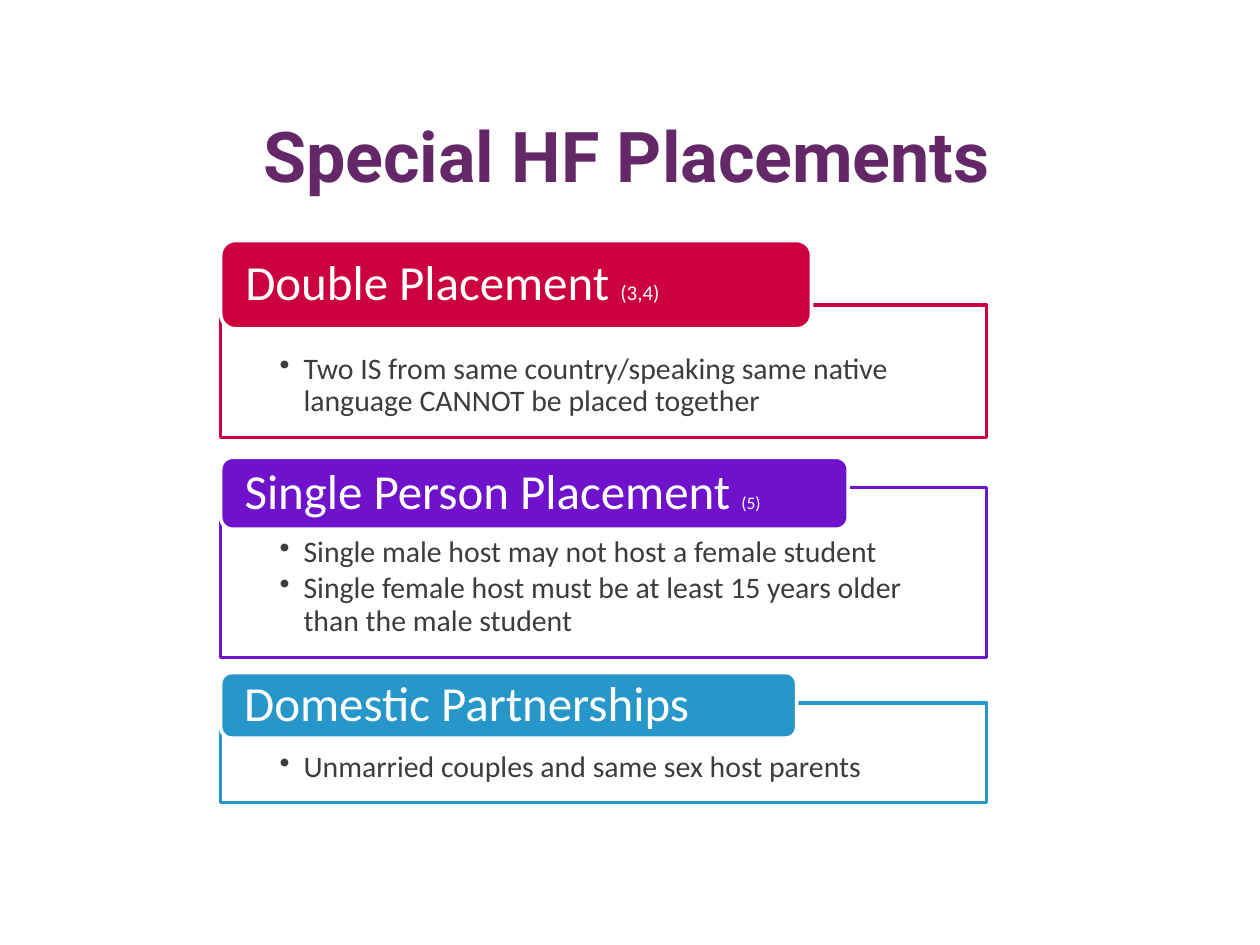
from lxml.etree import SubElement
from pptx import Presentation
from pptx.dml.color import RGBColor
from pptx.enum.shapes import MSO_SHAPE as Shape
from pptx.enum.text import MSO_ANCHOR as Anchor, PP_ALIGN as Align
from pptx.oxml.ns import qn
from pptx.util import Cm, Pt

RED = RGBColor(0xCD, 0x00, 0x3F)
VIOLET = RGBColor(0x6F, 0x12, 0xCC)
BLUE = RGBColor(0x27, 0x97, 0xC9)
PLUM = RGBColor(0x64, 0x28, 0x69)
CHARCOAL = RGBColor(0x3C, 0x3C, 0x3B)
WHITE = RGBColor(0xFF, 0xFF, 0xFF)

LEFT, PANEL_WIDTH = 4.45, 15.44
TITLE_FONT = {"name": "Roboto", "size": Pt(40), "bold": True}
HEADING_FONT = {"name": "Calibri", "size": Pt(28)}
BULLET_FONT = {"name": "Calibri", "size": Pt(17)}

SECTIONS = [
    {"heading": "Double Placement ", "note": "(3,4)", "note_size": 12, "color": RED,
     "tab": (4.85, 11.91, 1.78), "panel": (6.15, 2.67),
     "bullets": ["Two IS from same country/speaking same native language "
                 "CANNOT be placed together"]},
    {"heading": "Single Person Placement ", "note": "(5)", "note_size": 10, "color": VIOLET,
     "tab": (9.22, 12.65, 1.45), "panel": (9.83, 3.43),
     "bullets": ["Single male host may not host a female student",
                 "Single female host must be at least 15 years older than the male student"]},
    {"heading": "Domestic Partnerships", "note": "", "note_size": 10, "color": BLUE,
     "tab": (13.56, 11.61, 1.32), "panel": (14.17, 2.01),
     "bullets": ["Unmarried couples and same sex host parents"]},
]


def set_all(target, values):
    """Set every attribute of target from a dict of values."""
    for name, value in values.items():
        setattr(target, name, value)


def style_font(font, values, color):
    """Give a font its format values and its colour."""
    set_all(font, values)
    font.color.rgb = color


def set_frame(frame, anchor, left, top, right, bottom):
    """Make a text frame wrap, with its anchor and its insets in centimetres."""
    set_all(frame, {"word_wrap": True, "vertical_anchor": anchor,
                    "margin_left": Cm(left), "margin_top": Cm(top),
                    "margin_right": Cm(right), "margin_bottom": Cm(bottom)})


def add_box(page, kind, box, fill, line):
    """Add a filled, outlined shape in a box given in centimetres."""
    shape = page.shapes.add_shape(kind, *map(Cm, box))
    shape.shadow.inherit = False
    shape.fill.solid()
    shape.fill.fore_color.rgb = fill
    shape.line.color.rgb = line
    shape.line.width = Pt(2)
    return shape


def add_bullet(para):
    """Give a paragraph a hanging round bullet."""
    properties = para._p.get_or_add_pPr()
    properties.set("marL", str(Cm(0.48)))
    properties.set("indent", str(Cm(-0.48)))
    SubElement(properties, qn("a:buChar"), char="•")


def add_panel(page, box, color, bullets):
    """Place the outlined panel with its bulleted list."""
    panel = add_box(page, Shape.RECTANGLE, box, WHITE, color)
    tint = panel._element.spPr.find(qn("a:solidFill"))[0]
    SubElement(tint, qn("a:alpha"), val="90000")
    frame = panel.text_frame
    set_frame(frame, Anchor.TOP, 1.19, 0.99, 1.19, 0.33)
    for index, text in enumerate(bullets):
        para = frame.add_paragraph() if index else frame.paragraphs[0]
        add_bullet(para)
        set_all(para, {"text": text, "level": 1, "alignment": Align.LEFT,
                       "line_spacing": 0.9, "space_after": Pt(2.5)})
        style_font(para.font, BULLET_FONT, CHARCOAL)


def add_tab(page, box, color, heading, note, note_size):
    """Place the rounded heading tab with its small reference note."""
    tab = add_box(page, Shape.ROUNDED_RECTANGLE, box, color, WHITE)
    set_frame(tab.text_frame, Anchor.MIDDLE, 0.41, 0, 0.41, 0)
    para = tab.text_frame.paragraphs[0]
    set_all(para, {"alignment": Align.LEFT, "line_spacing": 0.9})
    style_font(para.font, HEADING_FONT, WHITE)
    for text, size in ((heading, 28), (note, note_size)):
        if text:
            span = para.add_run()
            span.text = text
            style_font(span.font, {**HEADING_FONT, "size": Pt(size)}, WHITE)


def add_section(page, section):
    """Place one placement type: its panel, then the tab over it."""
    panel_top, panel_height = section["panel"]
    tab_top, tab_width, tab_height = section["tab"]
    add_panel(page, (LEFT, panel_top, PANEL_WIDTH, panel_height),
              section["color"], section["bullets"])
    add_tab(page, (LEFT, tab_top, tab_width, tab_height), section["color"],
            section["heading"], section["note"], section["note_size"])


def fill_title(page, text, box):
    """Move the title placeholder into its box and format it."""
    title = page.shapes.title
    set_all(title, dict(zip(("left", "top", "width", "height"), map(Cm, box))))
    set_frame(title.text_frame, Anchor.TOP, 0.25, 0.13, 0.25, 0.13)
    para = title.text_frame.paragraphs[0]
    set_all(para, {"text": text, "alignment": Align.CENTER})
    style_font(para.runs[0].font, TITLE_FONT, PLUM)


def main():
    """Build the deck and save it."""
    deck = Presentation()
    deck.slide_width, deck.slide_height = Cm(25.4), Cm(19.05)
    page = deck.slides.add_slide(deck.slide_layouts[5])
    fill_title(page, "Special HF Placements", (1.83, 2.13, 21.59, 1.7))
    for section in SECTIONS:
        add_section(page, section)
    deck.save("out.pptx")


if __name__ == "__main__":
    main()
